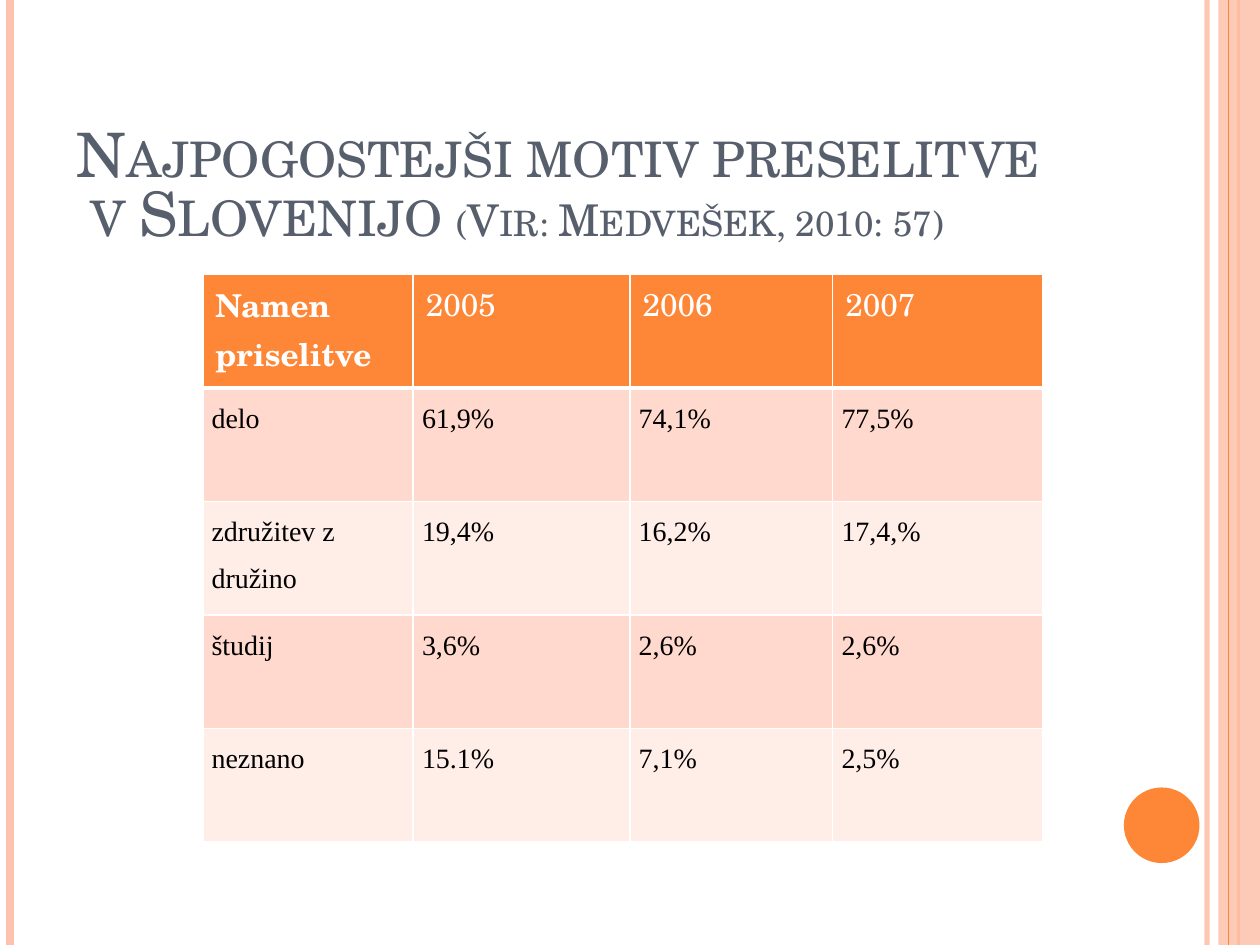
from dataclasses import dataclass

from lxml.etree import SubElement
from pptx import Presentation
from pptx.dml.color import RGBColor as RGB
from pptx.enum.shapes import MSO_CONNECTOR as Connector, MSO_SHAPE as Shape
from pptx.enum.text import MSO_ANCHOR as Anchor, MSO_AUTO_SIZE as AutoSize, PP_ALIGN as Align
from pptx.oxml.ns import qn
from pptx.util import Inches, Pt


@dataclass(frozen=True)
class Theme:
    orange: str = "FE8637"
    peach: str = "FEC3AE"
    slate: str = "575F6D"
    white: str = "FFFFFF"
    black: str = "000000"
    bands: tuple = ("FFD9CE", "FFEDE8")
    serif: str = "TeX Gyre Schola"
    body_font: str = "Times New Roman"
    title_size: float = 38
    source_size: float = 27
    title_scale: int = 90
    header_size: float = 18
    body_size: float = 16


@dataclass(frozen=True)
class Stripe:
    x: float
    color: str
    width: float
    opacity: int = 100


@dataclass(frozen=True)
class Block:
    kind: Shape
    box: tuple
    color: str
    opacity: int = 100


THEME = Theme()
SLIDE_HEIGHT = 7.5

# Side decoration, from back to front
DECORATION = [
    Stripe(9.58, THEME.peach, 3, 93),
    Stripe(0.08, THEME.peach, 4.5),
    Stripe(9.83, THEME.orange, 1.5),
    Block(Shape.RECTANGLE, (9.67, 0, 0.33, SLIDE_HEIGHT), THEME.peach, 87),
    Stripe(9.75, THEME.orange, 0.75),
    Block(Shape.OVAL, (8.92, 6.25, 0.6, 0.6), THEME.orange),
]

MOTIVES = [
    ("Namen priselitve", "2005", "2006", "2007"),
    ("delo", "61,9%", "74,1%", "77,5%"),
    ("združitev z družino", "19,4%", "16,2%", "17,4,%"),
    ("študij", "3,6%", "2,6%", "2,6%"),
    ("neznano", "15.1%", "7,1%", "2,5%"),
]
COLUMN_WIDTHS = (1.67, 1.72, 1.61, 1.67)
ROW_HEIGHT = 0.9


def apply(target, formats: dict) -> None:
    for name, value in formats.items():
        setattr(target, name, value)


def style_font(font, color: str, **formats) -> None:
    apply(font, formats)
    font.color.rgb = RGB.from_string(color)


def set_opacity(fill, element, opacity: int) -> None:
    if opacity < 100:
        color = next(element.iter(qn("a:srgbClr")))
        SubElement(color, qn("a:alpha"), val=str(opacity * 1000))


def draw_stripe(slide, stripe: Stripe) -> None:
    x = Inches(stripe.x)
    line = slide.shapes.add_connector(Connector.STRAIGHT, x, 0, x, Inches(SLIDE_HEIGHT))
    line.line.color.rgb = RGB.from_string(stripe.color)
    line.line.width = Pt(stripe.width)
    properties = line._element.spPr
    set_opacity(line.line.fill, properties, stripe.opacity)
    SubElement(properties, qn("a:effectLst"))


def draw_block(slide, block: Block) -> None:
    shape = slide.shapes.add_shape(block.kind, *map(Inches, block.box))
    shape.shadow.inherit = False
    shape.fill.solid()
    shape.fill.fore_color.rgb = RGB.from_string(block.color)
    shape.line.fill.background()
    set_opacity(shape.fill, shape._element.spPr, block.opacity)


def write_title(slide) -> None:
    title = slide.shapes.title
    apply(title, dict(left=Inches(0.51), top=Inches(0.68), width=Inches(9), height=Inches(1.25)))
    frame = title.text_frame
    apply(frame, dict(vertical_anchor=Anchor.BOTTOM, word_wrap=True,
                      auto_size=AutoSize.TEXT_TO_FIT_SHAPE))
    autofit = frame._txBody.bodyPr.find(qn("a:normAutofit"))
    autofit.set("fontScale", str(THEME.title_scale * 1000))

    heading = frame.paragraphs[0]
    heading.alignment = Align.LEFT
    parts = [
        ("Najpogostejši motiv preselitve", THEME.title_size),
        (None, THEME.title_size),
        (" v Slovenijo ", THEME.title_size),
        ("(Vir: Medvešek, 2010: 57)", THEME.source_size),
    ]
    for words, size in parts:
        if words is None:
            heading.add_line_break()
            continue
        run = heading.add_run()
        run.text = words
        style_font(run.font, THEME.slate, name=THEME.serif, size=Pt(size))
        run.font._element.set("cap", "small")


def set_borders(cell, widths: dict) -> None:
    properties = cell._tc.get_or_add_tcPr()
    for side, width in widths.items():
        border = SubElement(properties, qn(f"a:ln{side}"), w=str(Pt(width)))
        fill = SubElement(border, qn("a:solidFill"))
        SubElement(fill, qn("a:srgbClr"), val=THEME.white)


def fill_cell(cell, words: str, row: int, column: int) -> None:
    is_header = row == 0
    set_borders(cell, {"L": 1, "R": 1, "T": 3 if row == 1 else 1, "B": 3 if is_header else 1})
    color = THEME.orange if is_header else THEME.bands[(row - 1) % 2]
    cell.fill.solid()
    cell.fill.fore_color.rgb = RGB.from_string(color)

    paragraph = cell.text_frame.paragraphs[0]
    run = paragraph.add_run()
    run.text = words
    if is_header:
        style_font(run.font, THEME.white, name=THEME.serif,
                   size=Pt(THEME.header_size), bold=column == 0)
    else:
        side = Inches(0.07)
        apply(cell, dict(margin_left=side, margin_right=side, margin_top=0, margin_bottom=0))
        paragraph.line_spacing = 1.5
        style_font(run.font, THEME.black, name=THEME.body_font,
                   size=Pt(THEME.body_size), bold=False)


def draw_motives(slide) -> None:
    table = slide.shapes.add_table(
        len(MOTIVES), len(COLUMN_WIDTHS), Inches(1.61), Inches(2.18),
        Inches(sum(COLUMN_WIDTHS)), Inches(ROW_HEIGHT * len(MOTIVES))).table
    for column, width in zip(table.columns, COLUMN_WIDTHS):
        column.width = Inches(width)
    for row, values in enumerate(MOTIVES):
        table.rows[row].height = Inches(ROW_HEIGHT)
        for column, words in enumerate(values):
            fill_cell(table.cell(row, column), words, row, column)


def main() -> None:
    deck = Presentation()
    apply(deck, dict(slide_width=Inches(10), slide_height=Inches(SLIDE_HEIGHT)))
    slide = deck.slides.add_slide(deck.slide_layouts[5])

    # Decoration
    for part in DECORATION:
        draw = draw_stripe if isinstance(part, Stripe) else draw_block
        draw(slide, part)

    # Title and table of motives
    write_title(slide)
    draw_motives(slide)
    deck.save("out.pptx")


if __name__ == "__main__":
    main()
